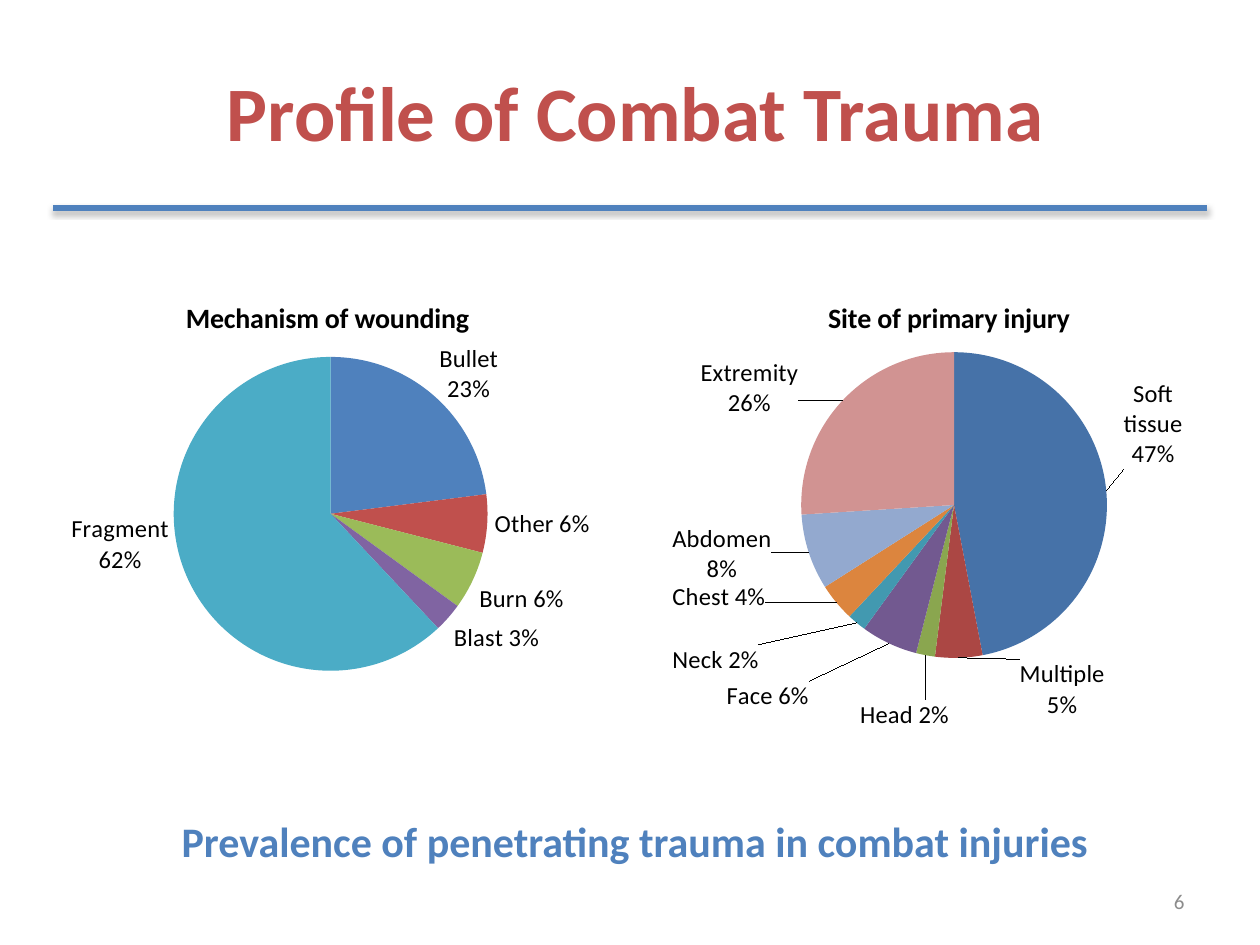
from dataclasses import dataclass

import pptx
import pptx.chart.data
import pptx.dml.color
import pptx.enum.chart
import pptx.enum.shapes
import pptx.enum.text
import pptx.oxml
import pptx.oxml.ns
import pptx.util

EMU_PER_PX = 914400 / 126
FONT = "Calibri"
COLORS = {
    "blue": "4F81BD", "red": "C0504D", "green": "9BBB59", "purple": "8064A2",
    "aqua": "4BACC6", "deep blue": "4672A8", "deep red": "AB4744",
    "deep green": "8AA64F", "deep purple": "725990", "deep aqua": "4299B0",
    "orange": "DC853E", "pale blue": "93A9CF", "pale red": "D19392",
    "black": "000000", "grey": "8C8C8C",
}
C_NS = pptx.oxml.ns.nsdecls("c")
A_NS = pptx.oxml.ns.nsdecls("a")
ALIGN = pptx.enum.text.PP_ALIGN
ANCHOR = pptx.enum.text.MSO_ANCHOR


@dataclass
class Slice:
    name: str
    percent: int
    color: str
    shift: tuple[int, int] = (0, 0)  # label offset from its default place, px
    two_lines: bool = False


@dataclass
class Pie:
    title: str
    box: tuple[int, int, int, int]
    title_at: tuple[int, int]          # within the chart, px
    disc: tuple[int, int, int]         # left, top, diameter within the chart, px
    leaders: bool
    slices: list[Slice]


PIES = [
    Pie("Site of primary injury", (672, 273, 557, 457), (151, 21), (129, 79, 306), True, [
        Slice("Soft tissue", 47, "deep blue", (10, -21), True),
        Slice("Multiple", 5, "deep red", (103, -6), True),
        Slice("Head", 2, "deep green", (25, 37)),
        Slice("Face", 6, "deep purple", (-77, 31)),
        Slice("Neck", 2, "deep aqua", (-93, 16)),
        Slice("Chest", 4, "orange", (-65, -25)),
        Slice("Abdomen", 8, "pale blue", (-30, -31), True),
        Slice("Extremity", 26, "pale red", (-39, 23), True),
    ]),
    Pie("Mechanism of wounding", (32, 283, 598, 451), (149, 11), (142, 74, 314), False, [
        Slice("Bullet", 23, "blue", (0, 14), True),
        Slice("Other", 6, "red"),
        Slice("Burn", 6, "green"),
        Slice("Blast", 3, "purple"),
        Slice("Fragment", 62, "aqua", (-9, -60), True),
    ]),
]


def px(length: int) -> pptx.util.Emu:
    return pptx.util.Emu(round(length * EMU_PER_PX))


def rgb(name: str) -> pptx.dml.color.RGBColor:
    return pptx.dml.color.RGBColor.from_string(COLORS[name])


def style(font, size: int, color: str, bold: bool = False) -> None:
    font.name, font.size, font.bold = FONT, pptx.util.Pt(size), bold
    font.color.rgb = rgb(color)


def add_text(slide, text: str, box: tuple, *, size: int, color: str, bold=False,
             align=ALIGN.CENTER, anchor=ANCHOR.MIDDLE) -> None:
    frame = slide.shapes.add_textbox(*map(px, box)).text_frame
    frame.word_wrap = True
    frame.vertical_anchor = anchor
    paragraph = frame.paragraphs[0]
    paragraph.alignment = align
    run = paragraph.add_run()
    run.text = text
    style(run.font, size, color, bold)


def add_rule(slide, left: int, right: int, y: int) -> None:
    rule = slide.shapes.add_connector(
        pptx.enum.shapes.MSO_CONNECTOR.STRAIGHT, px(left), px(y), px(right), px(y))
    rule.line.color.rgb = rgb("blue")
    rule.line.width = pptx.util.Pt(3)
    rule._element.spPr.append(pptx.oxml.parse_xml(
        f'<a:effectLst {A_NS}><a:outerShdw blurRad="40000" dist="23000" dir="5400000" '
        f'rotWithShape="0"><a:srgbClr val="{COLORS["black"]}"><a:alpha val="35000"/>'
        '</a:srgbClr></a:outerShdw></a:effectLst>'))


def layout(fractions: dict, target: str = "", edge: bool = True):
    """Manual chart layout; without edge, x and y are offsets."""
    parts = f'<c:layoutTarget val="{target}"/>' if target else ""
    if edge:
        parts += '<c:xMode val="edge"/><c:yMode val="edge"/>'
    parts += "".join(f'<c:{key} val="{value:.3f}"/>' for key, value in fractions.items())
    return pptx.oxml.parse_xml(
        f'<c:layout {C_NS}><c:manualLayout>{parts}</c:manualLayout></c:layout>')


def slice_label(index: int, part: Slice, width: int, height: int):
    separator = "\n" if part.two_lines else " "
    label = pptx.oxml.parse_xml(
        f'<c:dLbl {C_NS}><c:idx val="{index}"/><c:dLblPos val="outEnd"/>'
        '<c:showLegendKey val="0"/><c:showVal val="0"/><c:showCatName val="1"/>'
        '<c:showSerName val="0"/><c:showPercent val="1"/><c:showBubbleSize val="0"/>'
        f'<c:separator>{separator}</c:separator></c:dLbl>')
    if any(part.shift):
        dx, dy = part.shift
        label.insert(1, layout({"x": dx / width, "y": dy / height}, edge=False))
    return label


def add_pie(slide, pie: Pie) -> None:
    data = pptx.chart.data.CategoryChartData()
    data.categories = [part.name for part in pie.slices]
    data.add_series("Series 1", [part.percent for part in pie.slices])
    chart = slide.shapes.add_chart(
        pptx.enum.chart.XL_CHART_TYPE.PIE, *map(px, pie.box), data).chart
    style(chart.font, 14, "black")
    chart.has_legend = False
    width, height = pie.box[2:]

    # Title
    chart.has_title = True
    heading = chart.chart_title
    heading.include_in_layout = False
    run = heading.text_frame.paragraphs[0].add_run()
    run.text = pie.title
    style(run.font, 16, "black", True)
    title_element = heading._element
    for old in title_element.findall(pptx.oxml.ns.qn("c:layout")):
        title_element.remove(old)
    left, top = pie.title_at
    title_element.find(pptx.oxml.ns.qn("c:tx")).addnext(
        layout({"x": left / width, "y": top / height}))

    # Disc
    plot_area = chart._chartSpace.chart.plotArea
    for old in plot_area.findall(pptx.oxml.ns.qn("c:layout")):
        plot_area.remove(old)
    left, top, diameter = pie.disc
    plot_area.insert(0, layout({"x": left / width, "y": top / height,
                                "w": diameter / width, "h": diameter / height}, "inner"))

    # Slices and their labels
    plot = chart.plots[0]
    plot.vary_by_categories = True
    series = plot.series[0]
    labels = series.data_labels
    labels.show_value = False
    labels.show_category_name = labels.show_percentage = True
    labels.number_format, labels.number_format_is_linked = "0%", False
    labels.position = pptx.enum.chart.XL_LABEL_POSITION.OUTSIDE_END
    style(labels.font, 14, "black")
    leaders = labels._element.find(pptx.oxml.ns.qn("c:showLeaderLines"))
    if leaders is None:
        leaders = pptx.oxml.parse_xml(f'<c:showLeaderLines {C_NS}/>')
        labels._element.append(leaders)
    leaders.set("val", str(int(pie.leaders)))
    for index, part in enumerate(pie.slices):
        fill = series.points[index].format.fill
        fill.solid()
        fill.fore_color.rgb = rgb(part.color)
        labels._element.insert(index, slice_label(index, part, width, height))


def main() -> None:
    deck = pptx.Presentation()
    deck.slide_width, deck.slide_height = px(1260), px(945)
    slide = deck.slides.add_slide(deck.slide_layouts[6])

    # Heading
    add_rule(slide, 53, 1207, 208)
    add_text(slide, "Profile of Combat Trauma", (179, 32, 913, 157),
             size=44, color="red", bold=True)

    # Pies
    for pie in PIES:
        add_pie(slide, pie)

    # Conclusion and page number
    add_text(slide, "Prevalence of penetrating trauma in combat injuries",
             (73, 809, 1124, 63), size=24, color="blue", bold=True, anchor=ANCHOR.TOP)
    add_text(slide, "6", (903, 876, 294, 50), size=12, color="grey", align=ALIGN.RIGHT)

    deck.save("out.pptx")


if __name__ == "__main__":
    main()
